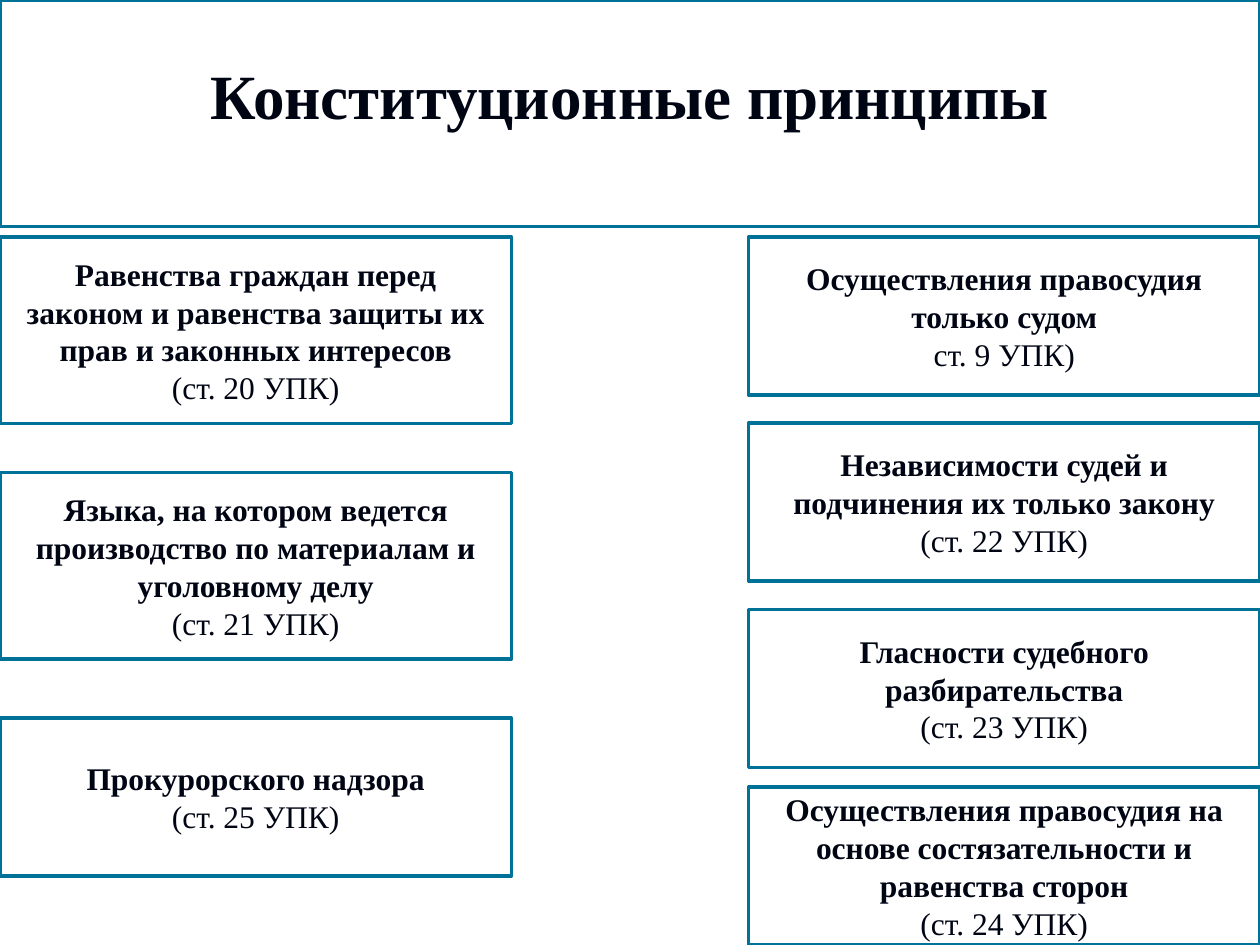
from pptx import Presentation
from pptx.dml.color import RGBColor as RGB
from pptx.enum.shapes import MSO_SHAPE as SHAPE
from pptx.enum.text import MSO_ANCHOR as ANCHOR, PP_ALIGN as ALIGN
from pptx.util import Cm, Pt

# Content
TITLE = "Конституционные принципы"
TALL, SHORT = 3.76, 3.18  # box heights, cm
# Each box: top, height, principle, article
LEFT = [
    (4.78, TALL, "Равенства граждан перед законом и равенства защиты "
                 "их прав и законных интересов", "(ст. 20 УПК)"),
    (9.53, TALL, "Языка, на котором ведется производство по материалам "
                 "и уголовному делу", "(ст. 21 УПК)"),
    (14.48, SHORT, "Прокурорского надзора", "(ст. 25 УПК)"),
]
RIGHT = [
    (4.78, SHORT, "Осуществления правосудия только судом", "ст. 9 УПК)"),
    (8.53, SHORT, "Независимости судей и подчинения их только закону",
     "(ст. 22 УПК)"),
    (12.29, SHORT, "Гласности судебного разбирательства", "(ст. 23 УПК)"),
    (15.87, SHORT, "Осуществления правосудия на основе состязательности "
                   "и равенства сторон", "(ст. 24 УПК)"),
]

THEME = {
    "font": "Times New Roman",
    "text": RGB.from_string("000514"),
    "fill": RGB.from_string("FFFFFF"),
    "line": RGB.from_string("007197"),
    "line_width": Pt(2),
    "title": Pt(36),
    "body": Pt(18),
}

# Layout, cm
SLIDE_W, SLIDE_H = 25.4, 19.05
TITLE_H = 4.57
BOX_W = 10.31
SIDE_INSET = 0.4
TITLE_BOTTOM_INSET = 0.9  # lifts the title above the middle


def add_box(s, x, y, w, h, lines, size):
    """Draw an outlined box; lines are (text, bold) pairs, one per paragraph."""
    sp = s.shapes.add_shape(SHAPE.RECTANGLE, Cm(x), Cm(y), Cm(w), Cm(h))
    sp.shadow.inherit = False
    sp.fill.solid()
    sp.fill.fore_color.rgb = THEME["fill"]
    sp.line.color.rgb = THEME["line"]
    sp.line.width = THEME["line_width"]
    tf = sp.text_frame
    tf.word_wrap = True
    tf.vertical_anchor = ANCHOR.MIDDLE
    tf.margin_left = tf.margin_right = Cm(SIDE_INSET)
    for i, (text, bold) in enumerate(lines):
        p = tf.add_paragraph() if i else tf.paragraphs[0]
        p.alignment = ALIGN.CENTER
        r = p.add_run()
        r.text = text
        r.font.name = THEME["font"]
        r.font.size = size
        r.font.bold = bold
        r.font.color.rgb = THEME["text"]
    return sp


prs = Presentation()
prs.slide_width, prs.slide_height = Cm(SLIDE_W), Cm(SLIDE_H)
s = prs.slides.add_slide(prs.slide_layouts[6])

# Title band
band = add_box(s, 0, 0, SLIDE_W, TITLE_H, [(TITLE, True)], THEME["title"])
band.text_frame.margin_bottom = Cm(TITLE_BOTTOM_INSET)

# Two columns, flush with the slide edges
for x, column in ((0, LEFT), (SLIDE_W - BOX_W, RIGHT)):
    for y, h, principle, article in column:
        add_box(s, x, y, BOX_W, h, [(principle, True), (article, False)],
                THEME["body"])

prs.save("out.pptx")
